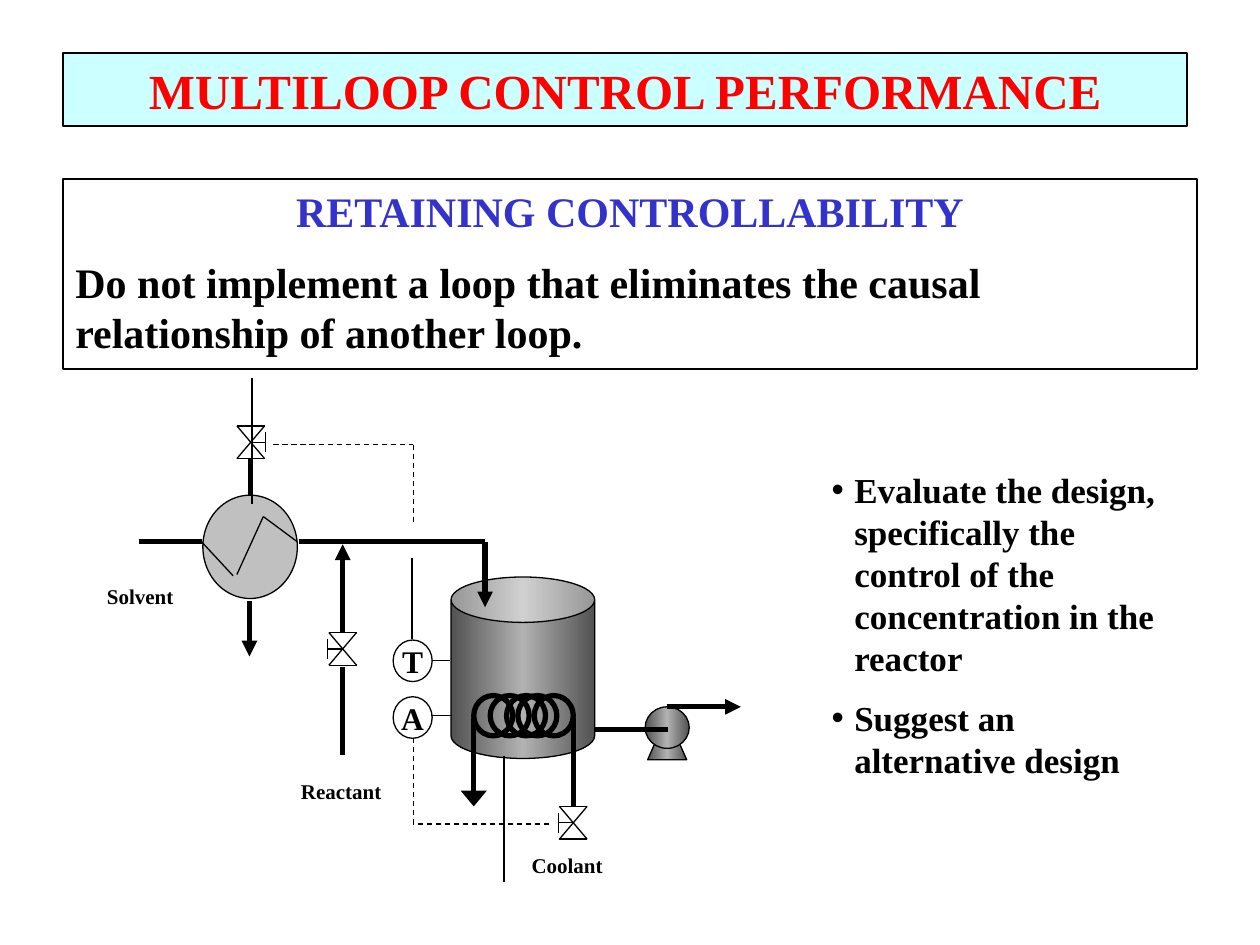
"""Build the slide on retaining controllability in multiloop control."""
import math
from copy import deepcopy

from lxml import etree
from pptx import Presentation
from pptx.dml.color import RGBColor
from pptx.enum.dml import MSO_LINE
from pptx.enum.shapes import MSO_CONNECTOR, MSO_SHAPE
from pptx.enum.text import MSO_ANCHOR, MSO_AUTO_SIZE, PP_ALIGN
from pptx.oxml.ns import qn
from pptx.util import Inches, Pt

BLACK = RGBColor(0x00, 0x00, 0x00)
RED = RGBColor(0xFF, 0x00, 0x00)
BLUE = RGBColor(0x33, 0x33, 0xCC)
PALE_CYAN = RGBColor(0xCC, 0xFF, 0xFF)
SILVER = RGBColor(0xC0, 0xC0, 0xC0)
STEEL = [RGBColor(0x52, 0x52, 0x52), RGBColor(0xB2, 0xB2, 0xB2), RGBColor(0x52, 0x52, 0x52)]
FONT = "Times New Roman"
THIN, THICK = 0.75, 3
DASH = MSO_LINE.DASH
LEFT, CENTER = PP_ALIGN.LEFT, PP_ALIGN.CENTER
TOP, MIDDLE = MSO_ANCHOR.TOP, MSO_ANCHOR.MIDDLE
RECT, OVAL, CAN = MSO_SHAPE.RECTANGLE, MSO_SHAPE.OVAL, MSO_SHAPE.CAN
PUMP_FOOT = MSO_SHAPE.FLOWCHART_MANUAL_OPERATION

TITLE = [("MULTILOOP CONTROL PERFORMANCE", 28, RED, CENTER)]
RULE = [
    ("RETAINING CONTROLLABILITY", 24, BLUE, CENTER),
    ("Do not implement a loop that eliminates the causal relationship of another loop.",
     24, BLACK, LEFT),
]
TASKS = [
    ("Evaluate the design, specifically the control of the concentration in the reactor",
     20, BLACK, LEFT),
    ("Suggest an alternative design", 20, BLACK, LEFT),
]
STREAMS = [("Solvent", 0.75, 4.58), ("Reactant", 2.29, 6.13), ("Coolant", 4.12, 6.72)]
SENSORS = [("T", 5.08), ("A", 5.53)]
COIL_LEFTS = [3.76, 3.89, 4.02, 4.11, 4.24]
# centre x, centre y, side of the actuator
VALVES = [(1.99, 3.51, 1), (2.72, 5.15, -1), (4.55, 6.53, -1)]
# points, width, arrowhead size, dash
LINES = [
    ([(1.1, 4.3), (1.6, 4.3)], THICK, None, None),
    ([(2.37, 4.3), (3.85, 4.3), (3.85, 4.82)], THICK, "med", None),
    ([(1.99, 3.64), (1.99, 3.94)], THICK, None, None),
    ([(1.98, 4.77), (1.98, 5.21)], THICK, "med", None),
    ([(2.72, 5.99), (2.72, 5.29)], THICK, None, None),
    ([(2.72, 5.02), (2.72, 4.32)], THICK, "med", None),
    ([(3.76, 5.7), (3.76, 6.4)], THICK, "lg", None),
    ([(4.55, 5.7), (4.55, 6.4)], THICK, None, None),
    ([(5.3, 5.79), (4.72, 5.79)], THICK, None, None),
    ([(5.29, 5.61), (5.88, 5.61)], THICK, "med", None),
    ([(2.36, 4.3), (2.09, 4.1), (1.88, 4.56)], THIN, None, None),
    ([(1.85, 4.57), (1.6, 4.3)], THIN, None, None),
    ([(3.43, 5.24), (3.57, 5.24)], THIN, None, None),
    ([(3.42, 5.68), (3.59, 5.68)], THIN, None, None),
    ([(3.27, 5.07), (3.27, 4.43)], THIN, None, None),
    ([(2.17, 3.53), (3.28, 3.53), (3.28, 4.16)], THIN, None, DASH),
    ([(4.36, 6.54), (3.28, 6.54), (3.28, 5.85)], THIN, None, DASH),
]


def outline(sp, width=THIN):
    sp.line.color.rgb = BLACK
    sp.line.width = Pt(width)


def paint(sp, fill):
    if fill is None:
        sp.fill.background()
    elif fill is STEEL:
        sp.fill.gradient()
        sp.fill.gradient_angle = 0
        stops = sp._element.spPr.find(".//" + qn("a:gsLst"))
        stops.insert(1, deepcopy(stops[0]))
        for i, stop in enumerate(sp.fill.gradient_stops):
            stop.position = i / 2
            stop.color.rgb = fill[i]
    else:
        sp.fill.solid()
        sp.fill.fore_color.rgb = fill


def add_shape(shapes, kind, box, fill=None, width=THIN):
    sp = shapes.add_shape(kind, *map(Inches, box))
    sp.shadow.inherit = False
    paint(sp, fill)
    outline(sp, width)
    return sp


def write(sp, paragraphs, anchor=TOP, wrap=True):
    tf = sp.text_frame
    tf.word_wrap = wrap
    tf.auto_size = MSO_AUTO_SIZE.NONE
    tf.vertical_anchor = anchor
    for i, (text, size, color, align) in enumerate(paragraphs):
        p = tf.add_paragraph() if i else tf.paragraphs[0]
        p.alignment = align
        p.space_before = Pt(size / 2 if i else 0)
        r = p.add_run()
        r.text = text
        r.font.name, r.font.size, r.font.bold = FONT, Pt(size), True
        r.font.color.rgb = color


def place(sp, box):
    sp.left, sp.top, sp.width, sp.height = map(Inches, box)


def add_path(shapes, points, width=THIN, arrow=None, dash=None):
    for start, end in zip(points, points[1:]):
        c = shapes.add_connector(MSO_CONNECTOR.STRAIGHT, *map(Inches, start + end))
        outline(c, width)
        if dash:
            c.line.dash_style = dash
        if arrow and end == points[-1]:
            etree.SubElement(c.line._get_or_add_ln(), qn("a:tailEnd"),
                             type="triangle", w=arrow, len="med")
        etree.SubElement(c._element.spPr, qn("a:effectLst"))


def add_valve(shapes, x, y, side):
    group = shapes.add_group_shape().shapes
    w, h, bow_w, bow_h = 0.11, 0.13, 0.05, 0.08
    stem = x + side * 0.12
    for path in (
        [(x - w, y - h), (x + w, y - h)],
        [(x - w, y + h), (x + w, y + h)],
        [(x - w, y - h), (x + w, y + h)],
        [(x + w, y - h), (x - w, y + h)],
        [(x, y), (stem, y)],
        [(stem, y - bow_h), (stem, y + bow_h)],
    ):
        add_path(group, path)
    angles = [math.radians(a) for a in range(-90, 91, 10)]
    bow = [(stem + side * bow_w * math.cos(a), y + bow_h * math.sin(a)) for a in angles]
    builder = group.build_freeform(*bow[0], scale=Inches(1))
    builder.add_line_segments(bow[1:], close=False)
    sp = builder.convert_to_shape()
    sp.shadow.inherit = False
    sp.fill.background()
    outline(sp)


def main():
    prs = Presentation()
    prs.slide_width, prs.slide_height = Inches(10), Inches(7.5)
    s = prs.slides.add_slide(prs.slide_layouts[1])
    shapes = s.shapes

    title, body = shapes.title, s.placeholders[1]
    place(title, (0.5, 0.42, 8.92, 0.58))
    paint(title, PALE_CYAN)
    outline(title)
    write(title, TITLE, MIDDLE)
    write(add_shape(shapes, RECT, (0.5, 1.42, 9, 1.51)), RULE)
    place(body, (6.5, 3.67, 2.92, 2.6))
    write(body, TASKS)
    for p in body.text_frame.paragraphs:
        pPr = p._p.get_or_add_pPr()
        pPr.set("marL", str(Inches(0.18)))
        pPr.set("indent", str(-Inches(0.18)))

    tank = add_shape(shapes, CAN, (3.58, 4.58, 1.14, 1.44), STEEL)
    tank.adjustments[0] = 0.316
    foot = add_shape(shapes, PUMP_FOOT, (5.14, 5.89, 0.31, 0.14), STEEL)
    foot._element.spPr.find(qn("a:xfrm")).set("flipV", "1")
    add_shape(shapes, OVAL, (5.12, 5.61, 0.35, 0.33), STEEL)
    add_shape(shapes, OVAL, (1.61, 3.93, 0.75, 0.82), SILVER)
    for left in COIL_LEFTS:
        add_shape(shapes, OVAL, (left, 5.52, 0.31, 0.32), width=THICK)
    for letter, top in SENSORS:
        sp = add_shape(shapes, OVAL, (3.12, top, 0.31, 0.33))
        write(sp, [(letter, 18, BLACK, CENTER)], MIDDLE, wrap=False)
    for line in LINES:
        add_path(shapes, *line)
    for valve in VALVES:
        add_valve(shapes, *valve)
    for name, left, top in STREAMS:
        sp = shapes.add_textbox(*map(Inches, (left, top, 0.92, 0.3)))
        write(sp, [(name, 12, BLACK, LEFT)])
    prs.save("out.pptx")


if __name__ == "__main__":
    main()
